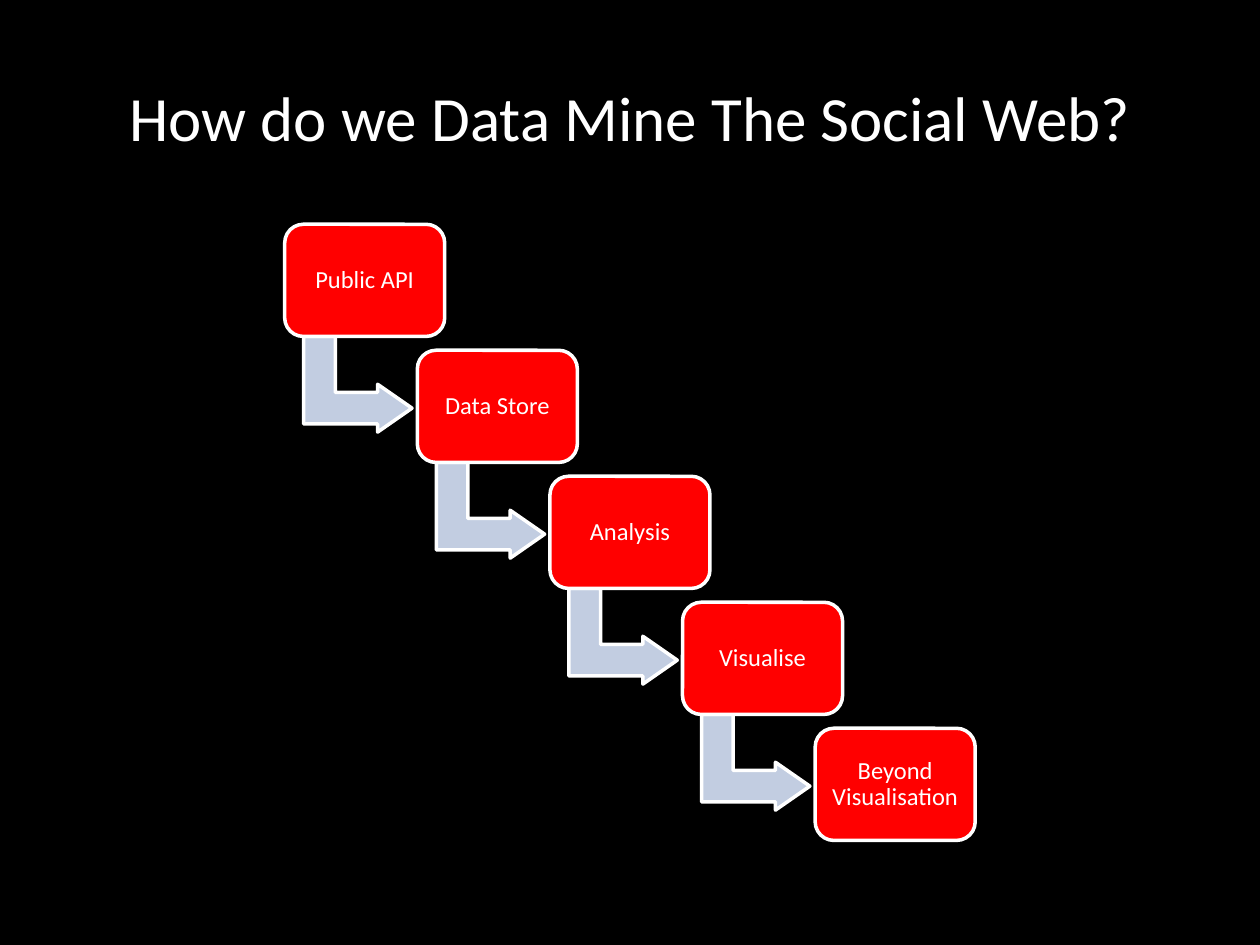
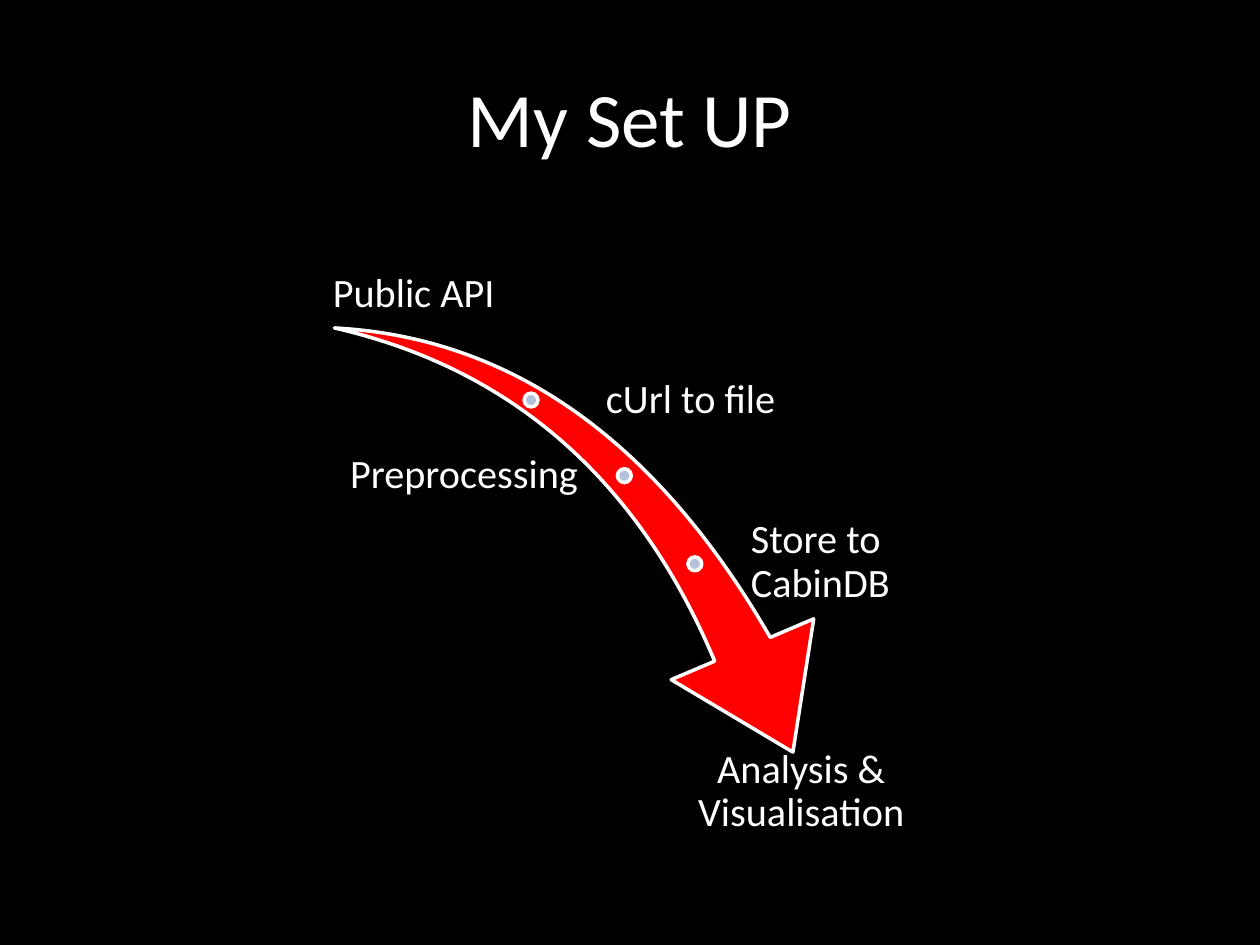
from pptx import Presentation
from pptx.dml.color import RGBColor
from pptx.enum import shapes, text
from pptx.util import Inches, Pt

FONT = "Calibri"
BLACK, WHITE, RED = "000000", "FFFFFF", "FF0000"
PALE_ARROW, PALE_DOT = "C2CDE1", "B3C1DB"
KIND, ALIGN, ANCHOR = shapes.MSO_SHAPE, text.PP_ALIGN, text.MSO_ANCHOR


def color(hex_code):
    return RGBColor.from_string(hex_code)


class Deck:
    """Holds the shared style and the slide being built."""

    def __init__(self):
        self.prs = Presentation()
        self.prs.slide_width, self.prs.slide_height = Inches(10), Inches(7.5)
        fill = self.prs.slide_master.background.fill
        fill.solid()
        fill.fore_color.rgb = color(BLACK)
        self.s = None

    def slide(self, title, size):
        self.s = self.prs.slides.add_slide(self.prs.slide_layouts[5])
        sp = self.s.shapes.title
        sp.left, sp.top, sp.width, sp.height = map(Inches, (0.5, 0.3, 9, 1.25))
        self.set_text(sp, title, size)

    def set_text(self, sp, words, size, align=ALIGN.CENTER, anchor=ANCHOR.MIDDLE):
        tf = sp.text_frame
        tf.text = words
        tf.word_wrap = True
        tf.vertical_anchor = anchor
        p = tf.paragraphs[0]
        p.alignment = align
        font = p.runs[0].font
        font.name, font.size, font.color.rgb = FONT, Pt(size), color(WHITE)

    def label(self, sp, words, size, inset, align=ALIGN.CENTER, anchor=ANCHOR.MIDDLE):
        """Set tightly spaced diagram text with equal insets."""
        self.set_text(sp, words, size, align, anchor)
        tf = sp.text_frame
        tf.margin_left = tf.margin_right = Inches(inset)
        tf.margin_top = tf.margin_bottom = Inches(inset)
        tf.paragraphs[0].line_spacing = 0.9

    def shape(self, kind, box, fill, adjustments=(), rotation=0):
        sp = self.s.shapes.add_shape(kind, *map(Inches, box))
        sp.shadow.inherit = False
        sp.fill.solid()
        sp.fill.fore_color.rgb = color(fill)
        sp.line.color.rgb = color(WHITE)
        sp.line.width = Pt(2)
        sp.rotation = rotation
        for i, value in enumerate(adjustments):
            sp.adjustments[i] = value
        return sp

    def caption(self, words, box, align, anchor=ANCHOR.MIDDLE):
        sp = self.s.shapes.add_textbox(*map(Inches, box))
        self.label(sp, words, 23, 0.03, align, anchor)


def mining_steps(deck):
    deck.slide("How do we Data Mine The Social Web?", 36)
    steps = ["Public API", "Data Store", "Analysis", "Visualise", "Beyond Visualisation"]
    first_x, last_x, first_y, step_y = 2.26, 6.47, 1.78, 1
    step_x = (last_x - first_x) / (len(steps) - 1)
    for i, step in enumerate(steps):
        x, y = first_x + i * step_x, first_y + i * step_y
        if i < len(steps) - 1:
            deck.shape(KIND.BENT_UP_ARROW, (x + 0.2, y + 0.84, 0.76, 0.86),
                       PALE_ARROW, (0.33, 0.25, 0.36), 90)
        sp = deck.shape(KIND.ROUNDED_RECTANGLE, (x, y, 1.27, 0.89), RED)
        deck.label(sp, step, 14, 0.06)


def set_up(deck):
    deck.slide("My Set UP", 44)
    deck.shape(KIND.SWOOSH_ARROW, (2.56, 2.73, 4.27, 2.98), RED, (0.16, 0.31), 73.3)
    for x, y in [(4.16, 3.12), (4.9, 3.72), (5.46, 4.42)]:
        deck.shape(KIND.OVAL, (x, y, 0.11, 0.11), PALE_DOT)
    height = 0.79
    deck.caption("Public API", (2.28, 1.75, 2.01, height), ALIGN.CENTER, ANCHOR.BOTTOM)
    deck.caption("cUrl to file", (4.78, 2.78, 2.94, height), ALIGN.LEFT)
    deck.caption("Preprocessing", (2.28, 3.38, 2.34, height), ALIGN.RIGHT)
    deck.caption("Store to CabinDB", (5.93, 4.07, 1.8, height), ALIGN.LEFT)
    deck.caption("Analysis & Visualisation", (5, 5.91, 2.72, height), ALIGN.CENTER, ANCHOR.TOP)


def main():
    deck = Deck()
    mining_steps(deck)
    set_up(deck)
    deck.prs.save("out.pptx")


if __name__ == "__main__":
    main()
